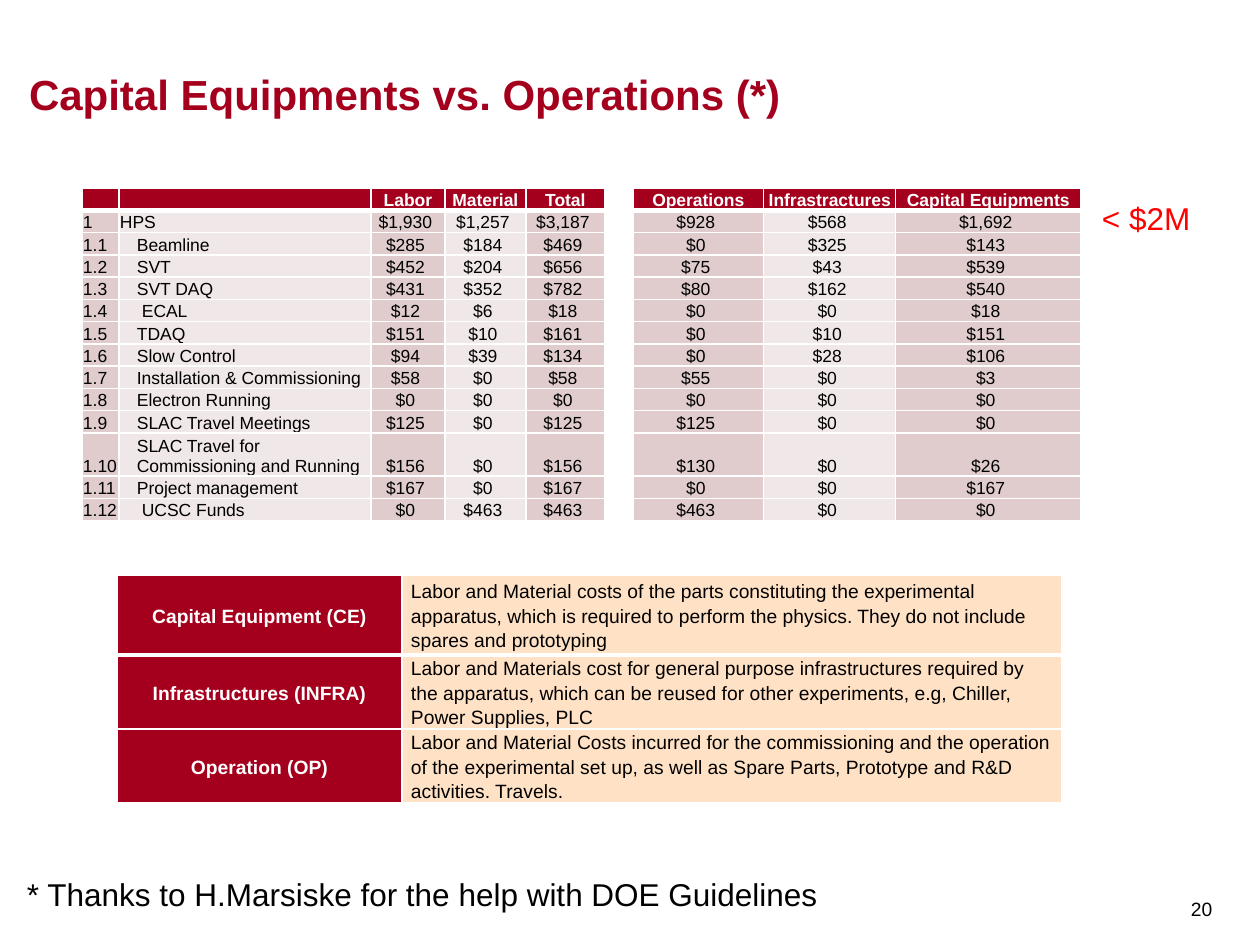
"""Build the capital equipment versus operations cost slide."""
from lxml.etree import SubElement
from pptx import Presentation
from pptx.dml.color import RGBColor as RGB
from pptx.enum.text import MSO_ANCHOR as ANCHOR, PP_ALIGN as ALIGN
from pptx.oxml.ns import qn
from pptx.util import Pt

PX = 914400 // 126
THEME = {
    "font": "Arial", "red": "A4001D", "alert": "FF0000", "black": "000000", "white": "FFFFFF",
    "dark_band": "E0CCCD", "light_band": "F0E7E8", "peach": "FFE2C6",
    "title": 24, "note": 18, "definition": 11, "cost": 10, "number": 11,
}


def write(tf, text, size, color, bold=False, align=ALIGN.LEFT, anchor=ANCHOR.TOP, insets=(13, 6, 13, 6), spacing=None):
    tf.text = text
    p = tf.paragraphs[0]
    p.alignment = align
    p.line_spacing = spacing
    for r in p.runs:
        r.font.name, r.font.size, r.font.bold = THEME["font"], Pt(THEME[size]), bold
        r.font.color.rgb = RGB.from_string(THEME[color])
    if not text:
        SubElement(p._p, qn("a:endParaRPr"), sz=str(THEME[size] * 100))
    return [anchor] + [inset * PX for inset in insets]


def add_grid(s, left, top, widths, heights):
    frame = s.shapes.add_table(len(heights), len(widths), left * PX, top * PX, sum(widths) * PX, sum(heights) * PX)
    table = frame.table
    table.first_row = table.horz_banding = False
    for column, width in zip(table.columns, widths):
        column.width = width * PX
    for i, height in enumerate(heights):
        table.rows[i].height = height * PX
        for cell in table.rows[i].cells:
            tcPr = cell._tc.get_or_add_tcPr()
            for side in "LRTB":
                thick = (side, i) in (("B", 0), ("T", 1))
                ln = SubElement(tcPr, qn(f"a:ln{side}"), w=str(Pt(3 if thick else 1)))
                SubElement(SubElement(ln, qn("a:solidFill")), qn("a:srgbClr"), val=THEME["white"])
    return table


prs = Presentation()
prs.slide_width, prs.slide_height = 1260 * PX, 945 * PX
s = prs.slides.add_slide(prs.slide_layouts[6])

DEFINITIONS = [
    ("Capital Equipment (CE)", "Labor and Material costs of the parts constituting the experimental apparatus, "
     "which is required to perform the physics. They do not include spares and prototyping"),
    ("Infrastructures (INFRA)", "Labor and Materials cost for general purpose infrastructures required by the "
     "apparatus, which can be reused for other experiments, e.g, Chiller, Power Supplies, PLC"),
    ("Operation (OP)", "Labor and Material Costs incurred for the commissioning and the operation of the "
     "experimental set up, as well as Spare Parts, Prototype and R&D activities. Travels."),
]
STYLES = [("white", True, ALIGN.CENTER, "red"), ("black", False, ALIGN.LEFT, "peach")]
definitions = add_grid(s, 117, 575, [285, 660], [80, 73, 73])
for i, row in enumerate(DEFINITIONS):
    for j, (text, (color, bold, align, fill)) in enumerate(zip(row, STYLES)):
        cell = definitions.cell(i, j)
        cell.vertical_anchor, cell.margin_left, cell.margin_top, cell.margin_right, cell.margin_bottom = write(
            cell.text_frame, text, "definition", color, bold, align, ANCHOR.MIDDLE, (9, 0, 9, 0), 1.15)
        cell.fill.solid()
        cell.fill.fore_color.rgb = RGB.from_string(THEME[fill])

HEADERS = ["", "", "Labor", "Material", "Total", "", "Operations", "Infrastractures", "Capital Equipments"]
COSTS = [
    ("HPS", 1930, 1257, 3187, 928, 568, 1692),
    ("Beamline", 285, 184, 469, 0, 325, 143),
    ("SVT", 452, 204, 656, 75, 43, 539),
    ("SVT DAQ", 431, 352, 782, 80, 162, 540),
    ("ECAL", 12, 6, 18, 0, 0, 18),
    ("TDAQ", 151, 10, 161, 0, 10, 151),
    ("Slow Control", 94, 39, 134, 0, 28, 106),
    ("Installation & Commissioning", 58, 0, 58, 55, 0, 3),
    ("Electron Running", 0, 0, 0, 0, 0, 0),
    ("SLAC Travel Meetings", 125, 0, 125, 125, 0, 0),
    ("SLAC Travel for Commissioning and Running", 156, 0, 156, 130, 0, 26),
    ("Project management", 167, 0, 167, 0, 0, 167),
    ("UCSC Funds", 0, 463, 463, 463, 0, 0),
]
GAP_COLUMN = 5
LIGHT_COLUMNS = (1, 3, 7)
LABEL_INSETS = {"HPS": 1, "ECAL": 23, "UCSC Funds": 23}
rows = [HEADERS]
for n, (label, *values) in enumerate(COSTS):
    money = [f"${value:,}" for value in values]
    rows.append([f"1.{n}" if n else "1", label, *money[:3], "", *money[3:]])

costs = add_grid(s, 82, 188, [37, 252, 74, 81, 79, 28, 131, 132, 185], [22] * 11 + [43] + [22] * 2)
for i, row in enumerate(rows):
    for j, text in enumerate(row):
        cell = costs.cell(i, j)
        header = i == 0
        left = LABEL_INSETS.get(text, 18) if j == 1 and not header else 1
        right = 6 if j > 1 and not header else 1
        cell.vertical_anchor, cell.margin_left, cell.margin_top, cell.margin_right, cell.margin_bottom = write(
            cell.text_frame, text, "cost", "white" if header else "black", header,
            ALIGN.CENTER if j > 1 else ALIGN.LEFT, ANCHOR.BOTTOM, (left, 1, right, 0))
        if j == GAP_COLUMN:
            cell.fill.background()
            continue
        band = "light_band" if j in LIGHT_COLUMNS else "dark_band"
        cell.fill.solid()
        cell.fill.fore_color.rgb = RGB.from_string(THEME["red" if header else band])

LABELS = [
    ("Capital Equipments vs. Operations (*)", (29, 16, 1116, 103), "title", "red", True, ANCHOR.BOTTOM, (0, 0, 0, 0)),
    ("< $2M", (1089, 193, 120, 50), "note", "alert", False, ANCHOR.TOP, (13, 6, 13, 6)),
    ("20", (1181, 871, 44, 74), "number", "black", False, ANCHOR.MIDDLE, (10, 8, 10, 6)),
    ("* Thanks to H.Marsiske for the help with DOE Guidelines", (14, 869, 830, 50), "note", "black", False,
     ANCHOR.TOP, (13, 6, 13, 6)),
]
for text, box, size, color, bold, anchor, insets in LABELS:
    tf = s.shapes.add_textbox(*[length * PX for length in box]).text_frame
    tf.word_wrap = True
    tf.vertical_anchor, tf.margin_left, tf.margin_top, tf.margin_right, tf.margin_bottom = write(
        tf, text, size, color, bold, anchor=anchor, insets=insets)

prs.save("out.pptx")
